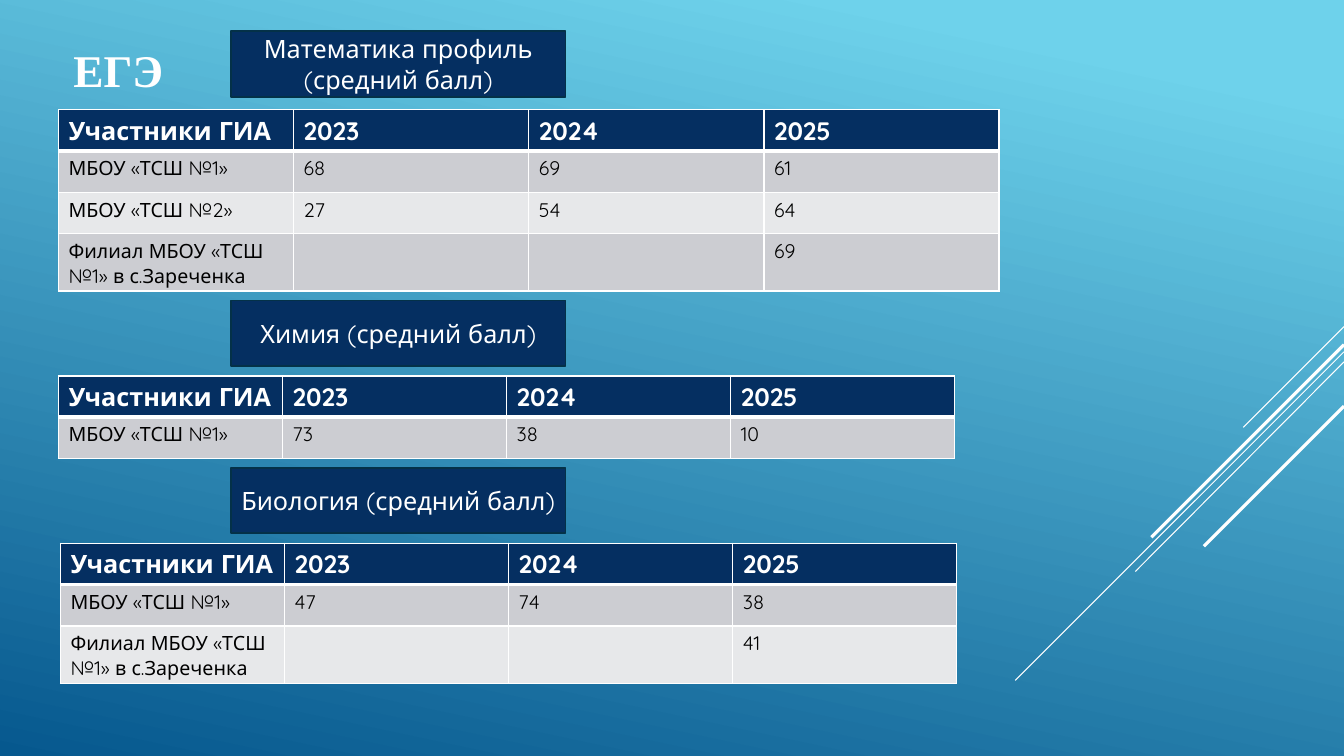
from dataclasses import dataclass

from lxml import etree
from pptx import Presentation
from pptx.dml.color import RGBColor
from pptx.enum.shapes import MSO_CONNECTOR, MSO_SHAPE
from pptx.enum.text import MSO_ANCHOR, PP_ALIGN
from pptx.oxml.ns import qn
from pptx.util import Inches, Pt

RECTANGLE = MSO_SHAPE.RECTANGLE
STRAIGHT = MSO_CONNECTOR.STRAIGHT
MIDDLE = MSO_ANCHOR.MIDDLE
CENTER = PP_ALIGN.CENTER

SCHOOL_1 = "МБОУ «ТСШ №1»"
SCHOOL_2 = "МБОУ «ТСШ №2»"
BRANCH = "Филиал МБОУ «ТСШ №1» в с.Зареченка"
HEADINGS = ("Участники ГИА", "2023", "2024", "2025")

SUBJECTS = [
    ("Математика профиль (средний балл)", 0.31, (0.58, 1.09, 9.33), [
        (SCHOOL_1, "68", "69", "61"),
        (SCHOOL_2, "27", "54", "64"),
        (BRANCH, "", "", "69"),
    ]),
    ("Химия (средний балл)", 2.98, (0.58, 3.73, 8.89), [
        (SCHOOL_1, "73", "38", "10"),
    ]),
    ("Биология (средний балл)", 4.64, (0.6, 5.39, 8.89), [
        (SCHOOL_1, "47", "74", "38"),
        (BRANCH, "", "", "41"),
    ]),
]

DIAGONALS = [
    (3.24, 12.33, 4.24, 0.75),
    (3.49, 10.07, 6.75, 0.75),
    (3.59, 11.26, 5.67, 0.75),
    (3.42, 11.42, 5.33, 2.25),
    (4.03, 11.94, 5.42, 2.25),
]


@dataclass(frozen=True)
class Theme:
    """Colours, fonts and type sizes of the slide."""
    sky: str = "6ED2EB"
    deep: str = "06588E"
    navy: str = "052F61"
    outline: str = "043148"
    white: str = "FFFFFF"
    black: str = "000000"
    bands: tuple = ("CCCDD2", "E7E8EA")
    title_font: str = "Times New Roman"
    font: str = "Quicksand"
    title_size: float = 32.4
    label_size: float = 18
    body_size: float = 14


def rgb(value):
    """Turn a hex value into a colour."""
    return RGBColor.from_string(value)


def write(frame, text, *, font, size, color, bold=False, align=None):
    """Put one formatted paragraph into a text frame."""
    paragraph = frame.paragraphs[0]
    paragraph.alignment = align
    run = paragraph.add_run()
    run.text = text
    run.font.name = font
    run.font.size = Pt(size)
    run.font.bold = bold
    run.font.color.rgb = rgb(color)


class ScoreSlide:
    """Draws the elements of the exam score slide."""

    def __init__(self, slide, theme):
        """Keep the slide and its theme."""
        self.slide = slide
        self.theme = theme

    def background(self):
        """Fill the slide with the slanted blue gradient."""
        fill = self.slide.background.fill
        fill.gradient()
        fill.gradient_angle = 360 - 102
        colors = (self.theme.sky, self.theme.deep)
        for stop, color, position in zip(fill.gradient_stops, colors, (0.1, 1)):
            stop.color.rgb = rgb(color)
            stop.position = position

    def diagonal(self, top, left, bottom, weight):
        """Draw a white line from the right edge down to the left."""
        line = self.slide.shapes.add_connector(
            STRAIGHT, Inches(13.33), Inches(top), Inches(left), Inches(bottom))
        line.line.color.rgb = rgb(self.theme.white)
        line.line.width = Pt(weight)
        etree.SubElement(line._element.spPr, qn("a:effectLst"))

    def title(self, text):
        """Write the slide title."""
        box = self.slide.shapes.add_textbox(
            Inches(0.63), Inches(0.37), Inches(9.33), Inches(0.63))
        box.text_frame.word_wrap = True
        box.text_frame.vertical_anchor = MIDDLE
        write(box.text_frame, text, font=self.theme.title_font,
              size=self.theme.title_size, color=self.theme.white, bold=True)

    def subject_label(self, text, top):
        """Draw the navy label above a score table."""
        label = self.slide.shapes.add_shape(
            RECTANGLE, Inches(2.29), Inches(top), Inches(3.32), Inches(0.65))
        label.shadow.inherit = False
        label.fill.solid()
        label.fill.fore_color.rgb = rgb(self.theme.navy)
        label.line.color.rgb = rgb(self.theme.outline)
        label.line.width = Pt(1.25)
        label.text_frame.word_wrap = True
        label.text_frame.vertical_anchor = MIDDLE
        write(label.text_frame, text, font=self.theme.font,
              size=self.theme.label_size, color=self.theme.white, align=CENTER)

    def borders(self, cell, top, bottom):
        """Give a cell white borders with its own top and bottom weights."""
        properties = cell._tc.get_or_add_tcPr()
        for side, weight in (("L", 1), ("R", 1), ("T", top), ("B", bottom)):
            edge = etree.SubElement(properties, qn(f"a:ln{side}"), w=str(Pt(weight)))
            fill = etree.SubElement(edge, qn("a:solidFill"))
            etree.SubElement(fill, qn("a:srgbClr"), val=self.theme.white)

    def score_table(self, left, top, width, scores):
        """Draw a banded score table under the heading row."""
        theme = self.theme
        rows = [HEADINGS, *scores]
        row_height = Inches(0.41)
        table = self.slide.shapes.add_table(
            len(rows), len(HEADINGS), Inches(left), Inches(top),
            Inches(width), row_height * len(rows)).table
        for row in table.rows:
            row.height = row_height
        for r, values in enumerate(rows):
            heading = r == 0
            for c, value in enumerate(values):
                cell = table.cell(r, c)
                self.borders(cell, 3 if r == 1 else 1, 3 if heading else 1)
                cell.fill.solid()
                cell.fill.fore_color.rgb = rgb(
                    theme.navy if heading else theme.bands[(r - 1) % 2])
                if value:
                    write(cell.text_frame, value, font=theme.font, bold=heading,
                          size=theme.label_size if heading else theme.body_size,
                          color=theme.white if heading else theme.black)


def main():
    """Build and save the slide."""
    deck = Presentation()
    deck.slide_width = Inches(13.33)
    deck.slide_height = Inches(7.5)
    page = ScoreSlide(deck.slides.add_slide(deck.slide_layouts[6]), Theme())
    page.background()
    for diagonal in DIAGONALS:
        page.diagonal(*diagonal)
    page.title("ЕГЭ")
    for subject, label_top, place, scores in SUBJECTS:
        page.subject_label(subject, label_top)
        page.score_table(*place, scores)
    deck.save("out.pptx")


if __name__ == "__main__":
    main()
